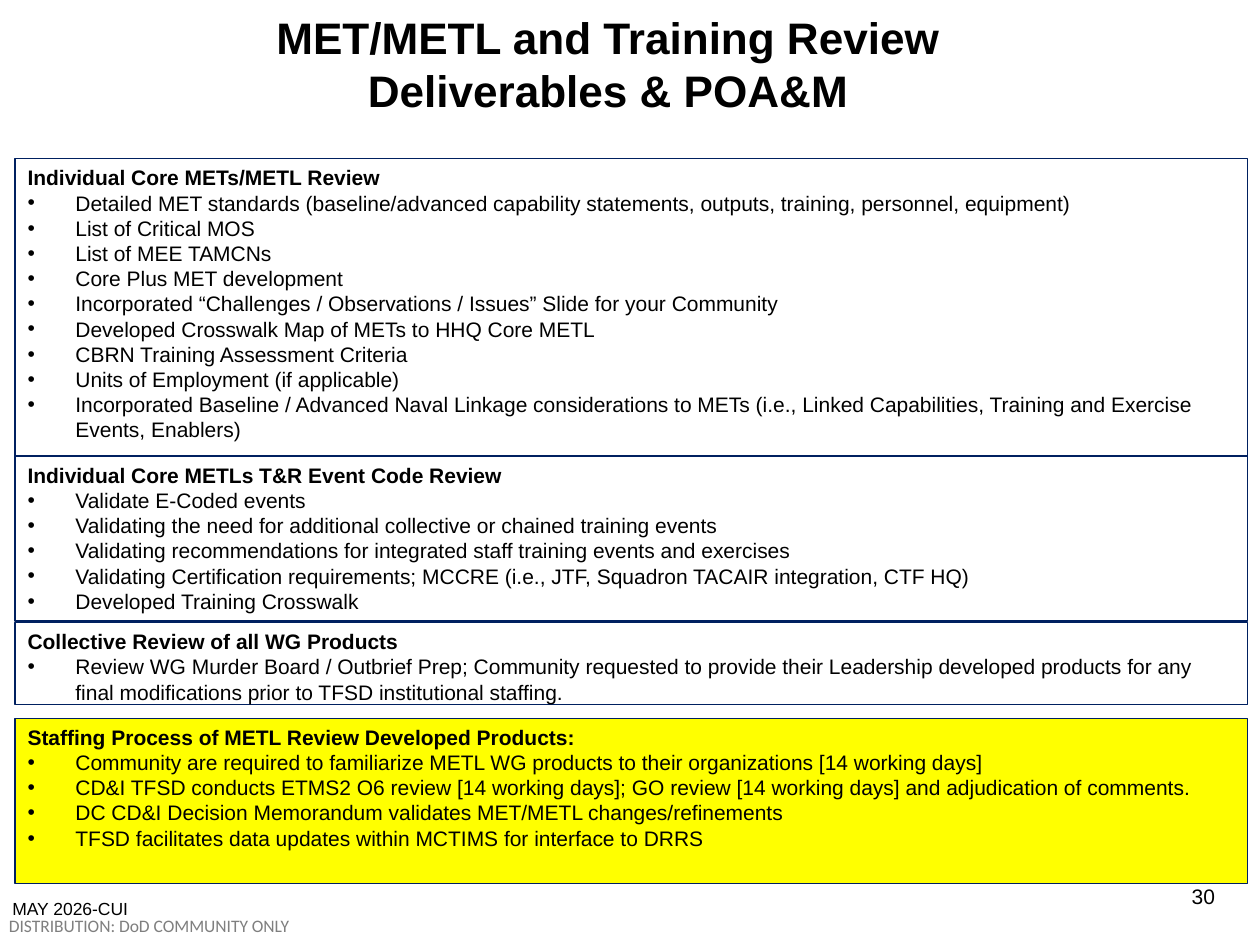
"""Build the MET/METL review deliverables slide."""
from lxml.etree import SubElement
from pptx import Presentation
from pptx.dml.color import RGBColor
from pptx.enum.shapes import MSO_SHAPE as Shape
from pptx.enum.text import MSO_ANCHOR as Anchor, PP_ALIGN as Align
from pptx.oxml.ns import qn
from pptx.util import Inches, Pt

COLORS = {"text": "000000", "muted": "7F7F7F", "border": "002060",
          "panel": "FFFFFF", "highlight": "FFFF00"}
TITLE = "MET/METL and Training Review Deliverables & POA&M"
PANEL_LEFT, PANEL_WIDTH, BULLET_INDENT = 0.12, 9.78, 0.38
PANELS = [
    (1.26, 2.36, "panel", "Individual Core METs/METL Review", [
        "Detailed MET standards (baseline/advanced capability statements, outputs, training, personnel, equipment)",
        "List of Critical MOS",
        "List of MEE TAMCNs",
        "Core Plus MET development",
        "Incorporated “Challenges / Observations / Issues” Slide for your Community",
        "Developed Crosswalk Map of METs to HHQ Core METL",
        "CBRN Training Assessment Criteria",
        "Units of Employment (if applicable)",
        "Incorporated Baseline / Advanced Naval Linkage considerations to METs "
        "(i.e., Linked Capabilities, Training and Exercise Events, Enablers)",
    ]),
    (3.62, 1.31, "panel", "Individual Core METLs T&R Event Code Review", [
        "Validate E-Coded events",
        "Validating the need for additional collective or chained training events",
        "Validating recommendations for integrated staff training events and exercises",
        "Validating Certification requirements; MCCRE (i.e., JTF, Squadron TACAIR integration, CTF HQ)",
        "Developed Training Crosswalk",
    ]),
    (4.94, 0.65, "panel", "Collective Review of all WG Products", [
        "Review WG Murder Board / Outbrief Prep; Community requested to provide their Leadership "
        "developed products for any final modifications prior to TFSD institutional staffing.",
    ]),
    (5.7, 1.31, "highlight", "Staffing Process of METL Review Developed Products:", [
        "Community are required to familiarize METL WG products to their organizations [14 working days]",
        "CD&I TFSD conducts ETMS2 O6 review [14 working days]; GO review [14 working days] "
        "and adjudication of comments.",
        "DC CD&I Decision Memorandum validates MET/METL changes/refinements",
        "TFSD facilitates data updates within MCTIMS for interface to DRRS",
    ]),
]


def color(name):
    return RGBColor.from_string(COLORS[name])


def add_text(paragraph, text, size, bold=False, font="Arial", tone="text"):
    run = paragraph.add_run()
    run.text = text
    run.font.name = font
    run.font.size = Pt(size)
    run.font.bold = bold
    run.font.color.rgb = color(tone)


def add_label(slide, box, text, size, margin=None, **style):
    frame = slide.shapes.add_textbox(*map(Inches, box)).text_frame
    frame.word_wrap = True
    if margin is not None:
        frame.margin_left = frame.margin_right = Inches(margin)
        frame.margin_top = frame.margin_bottom = Inches(margin)
    add_text(frame.paragraphs[0], text, size, **style)
    return frame


def add_bullet(paragraph):
    properties = paragraph._p.get_or_add_pPr()
    properties.set("marL", str(Inches(BULLET_INDENT)))
    properties.set("indent", str(-Inches(BULLET_INDENT)))
    SubElement(properties, qn("a:buFont"), typeface="Arial")
    SubElement(properties, qn("a:buChar"), char="•")


def add_panel(slide, top, height, fill, heading, items):
    box = (PANEL_LEFT, top, PANEL_WIDTH, height)
    shape = slide.shapes.add_shape(Shape.RECTANGLE, *map(Inches, box))
    shape.shadow.inherit = False
    shape.fill.solid()
    shape.fill.fore_color.rgb = color(fill)
    shape.line.color.rgb = color("border")
    shape.line.width = Pt(0.75)
    frame = shape.text_frame
    frame.word_wrap = True
    frame.vertical_anchor = Anchor.TOP
    paragraph = frame.paragraphs[0]
    paragraph.alignment = Align.LEFT
    add_text(paragraph, heading, 12, bold=True)
    for item in items:
        paragraph = frame.add_paragraph()
        paragraph.alignment = Align.LEFT
        add_bullet(paragraph)
        add_text(paragraph, item, 12)


def main():
    presentation = Presentation()
    presentation.slide_width, presentation.slide_height = Inches(10), Inches(7.5)
    slide = presentation.slides.add_slide(presentation.slide_layouts[6])
    add_label(slide, (0.07, 7.26, 2.28, 0.17), "DISTRIBUTION: DoD COMMUNITY ONLY", 10,
              margin=0, font="Calibri", tone="muted")
    title = add_label(slide, (1.07, 0, 7.51, 1), TITLE, 25.2, bold=True)
    title.vertical_anchor = Anchor.MIDDLE
    title.paragraphs[0].alignment = Align.CENTER
    for panel in PANELS:
        add_panel(slide, *panel)
    add_label(slide, (9.36, 6.96, 0.45, 0.4), "30", 12)
    add_label(slide, (0, 7.08, 1.7, 0.38), "MAY 2026-CUI", 10)
    presentation.save("out.pptx")


if __name__ == "__main__":
    main()
